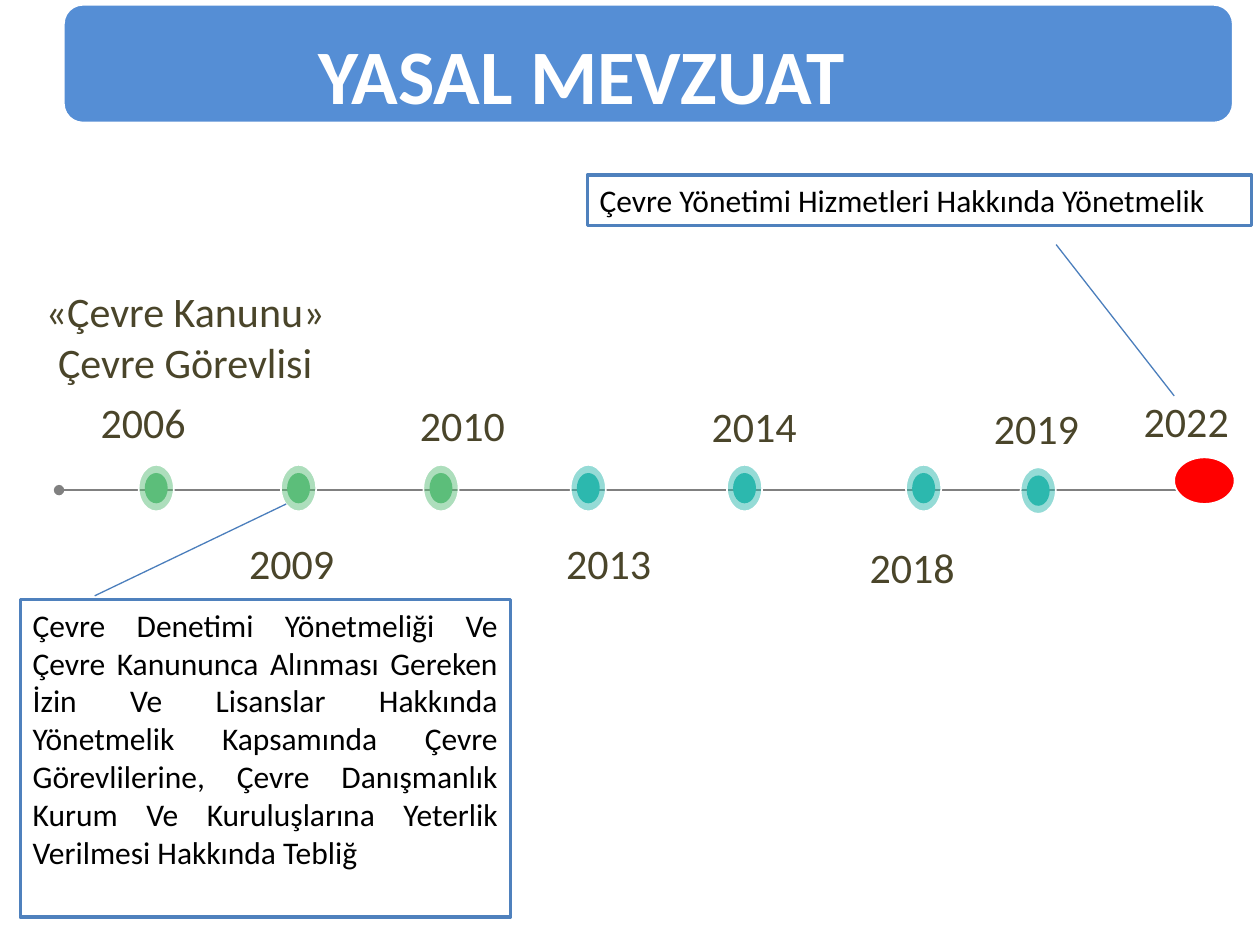
from dataclasses import dataclass

from lxml.etree import SubElement
from pptx import Presentation
from pptx.dml.color import RGBColor
from pptx.enum.shapes import MSO_CONNECTOR as Link, MSO_SHAPE as Kind
from pptx.enum.text import PP_ALIGN as Align
from pptx.oxml.ns import qn
from pptx.util import Cm, Pt

GREEN, TEAL, RED = "5CBE7A", "2CB8AE", "FF0000"
WHITE, BLACK, BROWN = "FFFFFF", "000000", "4A452A"
BLUE, EDGE, THREAD, GREY = "558ED5", "4F81BD", "4B7EBC", "808080"


@dataclass
class Year:
    """A year on the line: its label box, then its dot. Lengths are in cm."""
    name: str
    left: float
    top: float
    width: float
    dot_x: float
    hue: str
    dot_y: float = 9.84
    dot_w: float = 0.71
    alpha: int = 50


YEARS = [
    Year("2006", 1.27, 7.87, 3.23, 3.15, GREEN),
    Year("2009", 4.75, 10.72, 2.26, 6.02, GREEN),
    Year("2010", 7.8, 7.92, 3.05, 8.89, GREEN),
    Year("2013", 10.85, 10.72, 2.84, 11.86, TEAL),
    Year("2014", 13.67, 7.95, 3.07, 15.01, TEAL),
    Year("2018", 16.97, 10.8, 2.84, 18.62, TEAL),
    Year("2019", 19.56, 7.98, 2.67, 20.93, TEAL, 9.89),
    Year("2022", 22.58, 7.85, 2.67, 24.28, RED, 9.69, 1.22, 100),
]

DECREE = ("Çevre Denetimi Yönetmeliği Ve Çevre Kanununca Alınması Gereken "
          "İzin Ve Lisanslar Hakkında Yönetmelik Kapsamında Çevre "
          "Görevlilerine, Çevre Danışmanlık Kurum Ve Kuruluşlarına Yeterlik "
          "Verilmesi Hakkında Tebliğ")


def paint(target, hue: str) -> None:
    """Give a fill one solid colour."""
    target.solid()
    target.fore_color.rgb = RGBColor.from_string(hue)


def add_shape(home, kind, left: float, top: float, width: float, height: float,
              fill: str, edge: str = "", weight: float = 1, alpha: int = 100):
    shape = home.add_shape(kind, Cm(left), Cm(top), Cm(width), Cm(height))
    shape.shadow.inherit = False
    paint(shape.fill, fill)
    if alpha < 100:
        color = shape.fill._xPr.find(qn("a:solidFill"))[0]
        SubElement(color, qn("a:alpha"), val=str(alpha * 1000))
    if edge:
        paint(shape.line.fill, edge)
        shape.line.width = Pt(weight)
    else:
        shape.line.fill.background()
    return shape


def add_line(home, start: tuple, end: tuple, hue: str, weight: float,
             ends: str = "") -> None:
    line = home.add_connector(Link.STRAIGHT, *map(Cm, start + end))
    paint(line.line.fill, hue)
    line.line.width = Pt(weight)
    if ends:
        stroke = line.line._get_or_add_ln()
        for tag in ("a:headEnd", "a:tailEnd"):
            SubElement(stroke, qn(tag), type=ends)
    SubElement(line._element.spPr, qn("a:effectLst"))


def write(frame, text: str, *, size: int = 24, hue: str = BROWN,
          bold: bool = False, align=Align.CENTER, wrap: bool = True) -> None:
    """Fill a text frame, one paragraph for each line of text."""
    frame.word_wrap = wrap
    frame.text = text
    for para in frame.paragraphs:
        para.alignment = align
        font = para.runs[0].font
        font.name, font.size, font.bold = "Calibri", Pt(size), bold
        font.color.rgb = RGBColor.from_string(hue)


def add_text(home, text: str, left: float, top: float, width: float,
             height: float, **form) -> None:
    box = home.add_textbox(Cm(left), Cm(top), Cm(width), Cm(height))
    write(box.text_frame, text, **form)


def add_note(home, text: str, left: float, top: float, width: float,
             height: float, align) -> None:
    box = add_shape(home, Kind.RECTANGLE, left, top, width, height,
                    WHITE, EDGE, 2)
    box.text_frame.vertical_anchor = 1
    write(box.text_frame, text, size=18, hue=BLACK, align=align)


def add_dot(home, year: Year) -> None:
    """Draw a halo with a smaller core on the same centre."""
    group = home.add_group_shape().shapes
    for scale, edge, alpha in ((1, WHITE, year.alpha), (0.65, "", 100)):
        width, height = year.dot_w * scale, 0.94 * scale
        add_shape(group, Kind.OVAL, year.dot_x - width / 2,
                  year.dot_y - height / 2, width, height,
                  year.hue, edge, alpha=alpha)


def main() -> None:
    deck = Presentation()
    deck.slide_width, deck.slide_height = Cm(25.4), Cm(19.05)
    home = deck.slides.add_slide(deck.slide_layouts[6]).shapes

    add_line(home, (1.19, 9.88), (24.31, 9.88), GREY, 1.25, "oval")
    for year in YEARS:
        add_dot(home, year)
        add_text(home, year.name, year.left, year.top, year.width, 1.27)
    add_text(home, "«Çevre Kanunu»\nÇevre Görevlisi", 0, 5.64, 7.47, 2.31)

    add_shape(home, Kind.ROUNDED_RECTANGLE, 1.27, 0.08, 23.6, 2.41,
              BLUE, WHITE, 2)
    add_text(home, "YASAL MEVZUAT", 6.17, 0.43, 11.23, 2.13, size=44,
             hue=WHITE, bold=True, align=Align.LEFT, wrap=False)

    add_note(home, DECREE, 0.41, 12.09, 9.88, 6.4, Align.JUSTIFY)
    add_line(home, (1.91, 12.01), (5.77, 10.16), THREAD, 0.75)
    add_note(home, "Çevre Yönetimi Hizmetleri Hakkında Yönetmelik",
             11.84, 3.53, 13.39, 1.02, Align.LEFT)
    add_line(home, (23.67, 7.98), (21.29, 4.93), THREAD, 0.75)

    deck.save("out.pptx")


if __name__ == "__main__":
    main()
